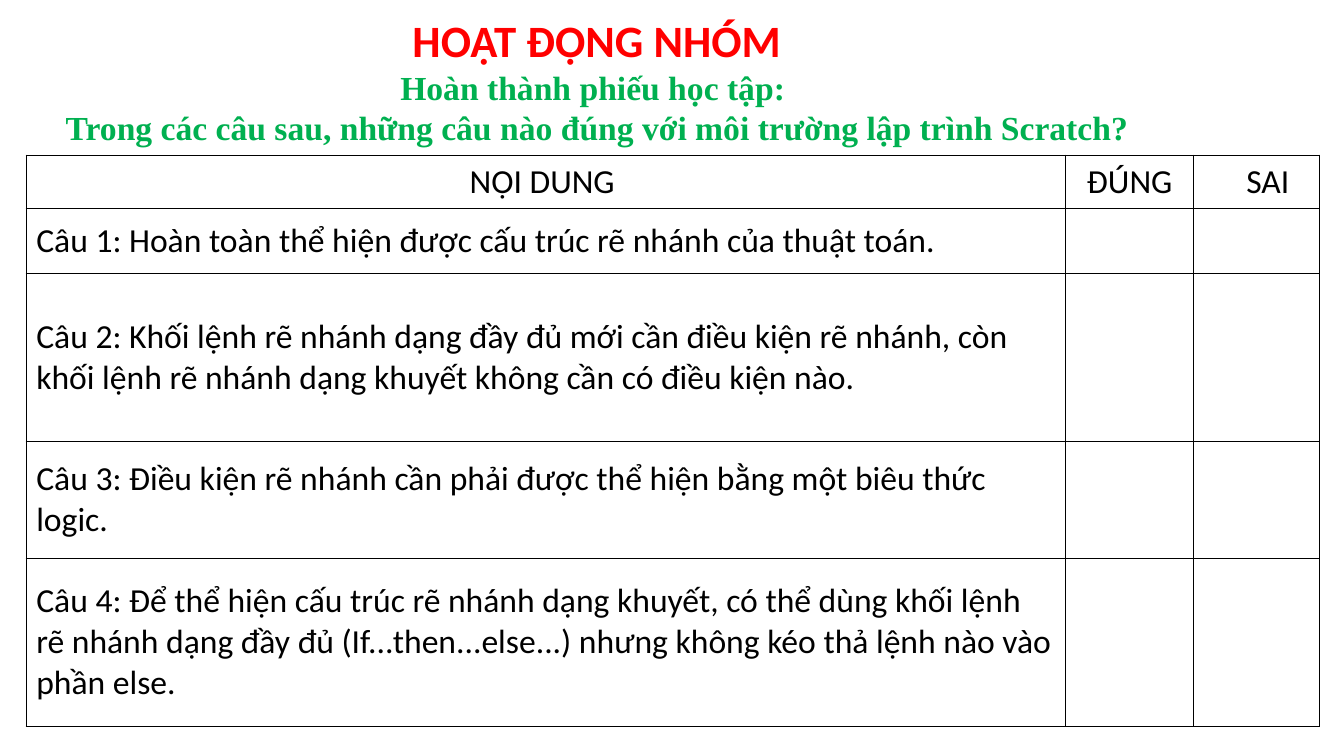
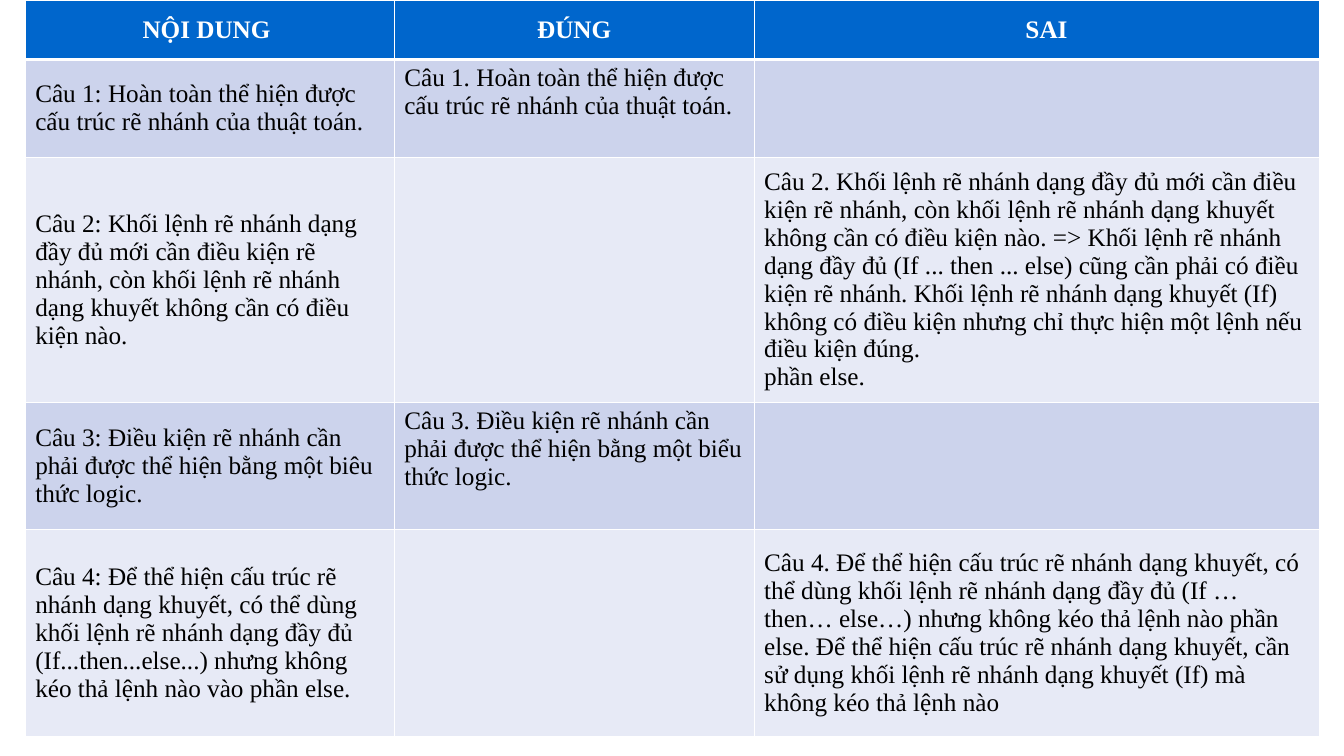
from dataclasses import dataclass

from lxml.etree import SubElement
from pptx import Presentation
from pptx.dml.color import RGBColor
from pptx.enum.text import MSO_ANCHOR, MSO_AUTO_SIZE, PP_ALIGN
from pptx.oxml.ns import qn
from pptx.util import Inches, Pt


@dataclass(frozen=True)
class Theme:
    red: str = "FF0000"
    green: str = "00B050"
    blue: str = "0066CC"
    dark_band: str = "CCD3EC"
    light_band: str = "E7EAF6"
    black: str = "000000"
    white: str = "FFFFFF"
    sans: str = "Calibri"
    serif: str = "Times New Roman"
    heading_size: int = 32
    large_size: int = 24
    small_size: int = 18


theme = Theme()
HEADERS = ["NỘI DUNG ", "ĐÚNG", "SAI"]
STATEMENTS = [
    "Câu 1: Hoàn toàn thể hiện được cấu trúc rẽ nhánh của thuật toán.",
    "Câu 2: Khối lệnh rẽ nhánh dạng đầy đủ mới cần điều kiện rẽ nhánh, còn khối lệnh "
    "rẽ nhánh dạng khuyết không cần có điều kiện nào.",
    "Câu 3: Điều kiện rẽ nhánh cần phải được thể hiện bằng một biêu thức logic.",
    "Câu 4: Để thể hiện cấu trúc rẽ nhánh dạng khuyết, có thể dùng khối lệnh rẽ nhánh "
    "dạng đầy đủ (If...then...else...) nhưng không kéo thả lệnh nào vào phần else.",
]
ANSWERS = [
    ("Câu 1. Hoàn toàn thể hiện được cấu trúc rẽ nhánh của thuật toán.", ""),
    ("", "Câu 2. Khối lệnh rẽ nhánh dạng đầy đủ mới cần điều kiện rẽ nhánh, còn khối lệnh "
     "rẽ nhánh dạng khuyết không cần có điều kiện nào. => Khối lệnh rẽ nhánh dạng đầy đủ "
     "(If ... then ... else) cũng cần phải có điều kiện rẽ nhánh. Khối lệnh rẽ nhánh dạng "
     "khuyết (If) không có điều kiện nhưng chỉ thực hiện một lệnh nếu điều kiện đúng.\n"
     "phần else."),
    ("Câu 3. Điều kiện rẽ nhánh cần phải được thể hiện bằng một biểu thức logic.", ""),
    ("", "Câu 4. Để thể hiện cấu trúc rẽ nhánh dạng khuyết, có thể dùng khối lệnh rẽ nhánh "
     "dạng đầy đủ (If … then… else…) nhưng không kéo thả lệnh nào phần else. Để thể hiện "
     "cấu trúc rẽ nhánh dạng khuyết, cần sử dụng khối lệnh rẽ nhánh dạng khuyết (If) mà "
     "không kéo thả lệnh nào"),
]


def write_lines(frame, lines, align):
    """Fill a frame with one paragraph per (text, font name, size, colour, bold)."""
    for index, (text, name, size, color, bold) in enumerate(lines):
        para = frame.paragraphs[0] if index == 0 else frame.add_paragraph()
        para.alignment = align
        span = para.add_run()
        span.text = text
        span.font.name = name
        span.font.size = Pt(size)
        span.font.bold = bold
        span.font.color.rgb = RGBColor.from_string(color)


def set_borders(cell, color, bottom_width):
    properties = cell._tc.get_or_add_tcPr()
    for side, width in (("L", 1), ("R", 1), ("T", 1), ("B", bottom_width)):
        line = SubElement(properties, qn(f"a:ln{side}"), w=str(Pt(width)))
        fill = SubElement(line, qn("a:solidFill"))
        SubElement(fill, qn("a:srgbClr"), val=color)


deck = Presentation()
deck.slide_width = Inches(13.33)
deck.slide_height = Inches(7.5)
title_layout, blank_layout = deck.slide_layouts[5], deck.slide_layouts[6]

worksheet = deck.slides.add_slide(title_layout)
title = worksheet.shapes.title
title.left, title.top = Inches(0.26), Inches(0.08)
title.width, title.height = Inches(11.32), Inches(1.45)
title.text_frame.auto_size = MSO_AUTO_SIZE.NONE
title.text_frame.vertical_anchor = MSO_ANCHOR.TOP
subtitle_style = (theme.serif, theme.large_size, theme.green, True)
write_lines(title.text_frame, [
    ("HOẠT ĐỘNG NHÓM", theme.sans, theme.heading_size, theme.red, True),
    ("Hoàn thành phiếu học tập: ", *subtitle_style),
    ("Trong các câu sau, những câu nào đúng với môi trường lập trình Scratch?", *subtitle_style),
], PP_ALIGN.CENTER)

answer_key = deck.slides.add_slide(blank_layout)

tables = [
    dict(page=worksheet, left=0.26, top=1.54,
         columns=[10.31, 1.27, 1.25], rows=[0.53, 0.64, 1.67, 1.16, 1.67],
         answers=[("", "")] * len(STATEMENTS), font=theme.sans, size=theme.large_size,
         header_color=theme.black, header_bold=False, header_fill=None, bands=None,
         border=theme.black, header_rule=1, last_header_inset=0.32),
    dict(page=answer_key, left=0.25, top=0,
         columns=[3.66, 3.57, 5.61], rows=[0.59, 0.97, 2.43, 1.26, 2.06],
         answers=ANSWERS, font=theme.serif, size=theme.small_size,
         header_color=theme.white, header_bold=True, header_fill=theme.blue,
         bands=(theme.dark_band, theme.light_band),
         border=theme.white, header_rule=3, last_header_inset=0.29),
]

for design in tables:
    columns, rows = design["columns"], design["rows"]
    table = design["page"].shapes.add_table(
        len(rows), len(columns), Inches(design["left"]), Inches(design["top"]),
        Inches(sum(columns)), Inches(sum(rows))).table
    table.horz_banding = False
    for column, width in zip(table.columns, columns):
        column.width = Inches(width)
    for row, height in zip(table.rows, rows):
        row.height = Inches(height)

    content = [HEADERS]
    content += [[statement, *answer] for statement, answer in zip(STATEMENTS, design["answers"])]
    for row_index, texts in enumerate(content):
        is_header = row_index == 0
        if is_header:
            fill_color = design["header_fill"]
        else:
            fill_color = design["bands"] and design["bands"][(row_index - 1) % 2]
        color = design["header_color"] if is_header else theme.black
        bold = is_header and design["header_bold"]
        align = PP_ALIGN.CENTER if is_header else PP_ALIGN.LEFT

        for column_index, text in enumerate(texts):
            cell = table.cell(row_index, column_index)
            set_borders(cell, design["border"], design["header_rule"] if is_header else 1)
            if fill_color:
                cell.fill.solid()
                cell.fill.fore_color.rgb = RGBColor.from_string(fill_color)
            else:
                cell.fill.background()
            is_true_answer = column_index == 1 and not is_header
            cell.vertical_anchor = MSO_ANCHOR.TOP if is_true_answer else MSO_ANCHOR.MIDDLE
            if text:
                lines = [(line, design["font"], design["size"], color, bold)
                         for line in text.split("\n")]
                write_lines(cell.text_frame, lines, align)
    table.cell(0, len(columns) - 1).margin_left = Inches(design["last_header_inset"])

deck.save("out.pptx")
